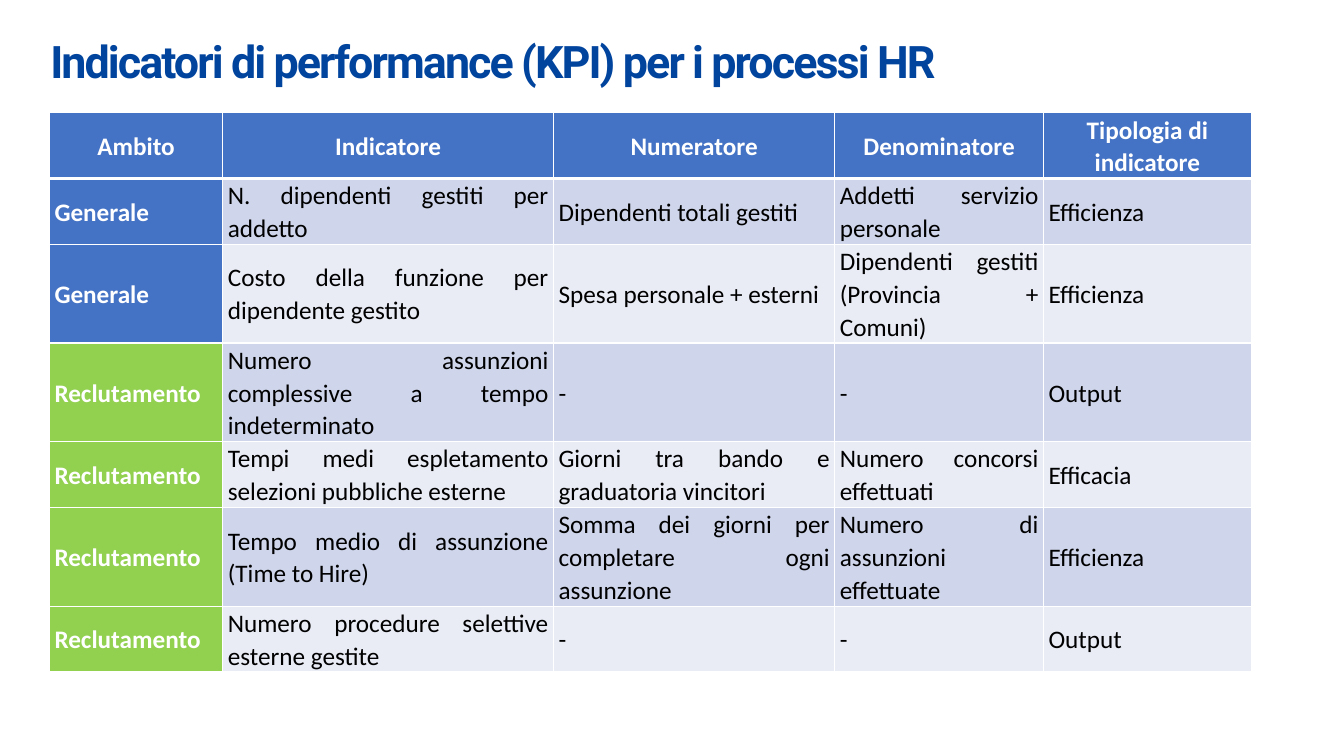
from lxml import etree
from pptx import Presentation
from pptx.dml.color import RGBColor
from pptx.enum.text import MSO_ANCHOR, PP_ALIGN
from pptx.oxml.ns import qn
from pptx.util import Inches, Pt

MIDDLE = MSO_ANCHOR.MIDDLE
LEFT, CENTER, JUSTIFY = PP_ALIGN.LEFT, PP_ALIGN.CENTER, PP_ALIGN.JUSTIFY
SLIDE_W, SLIDE_H = Inches(13.33), Inches(7.5)
COLORS = {
    "title": "00449E", "white": "FFFFFF", "black": "000000",
    "header": "4472C4", "Generale": "4472C4", "Reclutamento": "92D050",
    "odd": "CFD5EA", "even": "E9EBF5",
}

TITLE = "Indicatori di performance (KPI) per i processi HR"
COLUMN_SHARES = (12.9, 24.61, 20.93, 15.53, 15.45)
LINE_SHARE = 4.35
ROW_LINES = (2, 2, 3, 3, 2, 3, 2)
KPI_ROWS = (
    ("Ambito", "Indicatore", "Numeratore", "Denominatore", "Tipologia di indicatore"),
    ("Generale", "N. dipendenti gestiti per addetto", "Dipendenti totali gestiti",
     "Addetti servizio personale", "Efficienza"),
    ("Generale", "Costo della funzione per dipendente gestito",
     "Spesa personale + esterni", "Dipendenti gestiti (Provincia + Comuni)", "Efficienza"),
    ("Reclutamento", "Numero assunzioni complessive a tempo indeterminato",
     "-", "-", "Output"),
    ("Reclutamento", "Tempi medi espletamento selezioni pubbliche esterne",
     "Giorni tra bando e graduatoria vincitori", "Numero concorsi effettuati", "Efficacia"),
    ("Reclutamento", "Tempo medio di assunzione (Time to Hire)",
     "Somma dei giorni per completare ogni assunzione",
     "Numero di assunzioni effettuate", "Efficienza"),
    ("Reclutamento", "Numero procedure selettive esterne gestite", "-", "-", "Output"),
)

TITLE_FONT = {"name": "Roboto", "size": Pt(32), "bold": True}
CELL_FONT = {"name": "Calibri", "size": Pt(18)}
CELL_FORMAT = {"vertical_anchor": MIDDLE, "margin_left": Inches(0.05),
               "margin_right": Inches(0.05), "margin_top": 0, "margin_bottom": 0}
CELL_SPACING = {"line_spacing": 1.07, "space_after": Pt(6)}


def across(percent):
    return round(SLIDE_W * percent / 100)


def down(percent):
    return round(SLIDE_H * percent / 100)


def set_all(target, values):
    for name, value in values.items():
        setattr(target, name, value)


def write(p, text, font, color, align):
    p.alignment = align
    r = p.add_run()
    r.text = text
    set_all(r.font, font)
    r.font.color.rgb = RGBColor.from_string(COLORS[color])
    return r


def add_title(s):
    sp = s.shapes.add_textbox(across(3), down(2.67), across(94), down(10.67))
    tf = sp.text_frame
    set_all(tf, {"word_wrap": True, "vertical_anchor": MIDDLE})
    r = write(tf.paragraphs[0], TITLE, TITLE_FONT, "title", LEFT)
    r.font._element.set("spc", "-140")


def add_borders(cell, bottom):
    """Draw white cell edges, the bottom one with its own width."""
    tc_pr = cell._tc.get_or_add_tcPr()
    for edge, width in (("L", 1), ("R", 1), ("T", 1), ("B", bottom)):
        ln = etree.SubElement(tc_pr, qn(f"a:ln{edge}"), w=str(Pt(width)))
        fill = etree.SubElement(ln, qn("a:solidFill"))
        etree.SubElement(fill, qn("a:srgbClr"), val=COLORS["white"])


def fill_cell(cell, text, fill, header, strong):
    set_all(cell, CELL_FORMAT)
    add_borders(cell, 3 if header else 1)
    cell.fill.solid()
    cell.fill.fore_color.rgb = RGBColor.from_string(COLORS[fill])
    p = cell.text_frame.paragraphs[0]
    set_all(p, CELL_SPACING)
    write(p, text, {**CELL_FONT, "bold": strong}, "white" if strong else "black",
          CENTER if header else JUSTIFY)


def add_kpi_table(s):
    frame = s.shapes.add_table(
        len(KPI_ROWS), len(COLUMN_SHARES), across(3.68), down(14.93),
        across(sum(COLUMN_SHARES)), down(LINE_SHARE * sum(ROW_LINES)))
    table = frame.table
    for column, share in zip(table.columns, COLUMN_SHARES):
        column.width = across(share)
    for row, lines in zip(table.rows, ROW_LINES):
        row.height = down(LINE_SHARE * lines)
    for i, texts in enumerate(KPI_ROWS):
        header = i == 0
        band = "odd" if i % 2 else "even"
        for j, text in enumerate(texts):
            fill = "header" if header else text if j == 0 else band
            fill_cell(table.cell(i, j), text, fill, header, header or j == 0)


def main():
    prs = Presentation()
    set_all(prs, {"slide_width": SLIDE_W, "slide_height": SLIDE_H})
    s = prs.slides.add_slide(prs.slide_layouts[6])
    add_title(s)
    add_kpi_table(s)
    prs.save("out.pptx")


if __name__ == "__main__":
    main()
